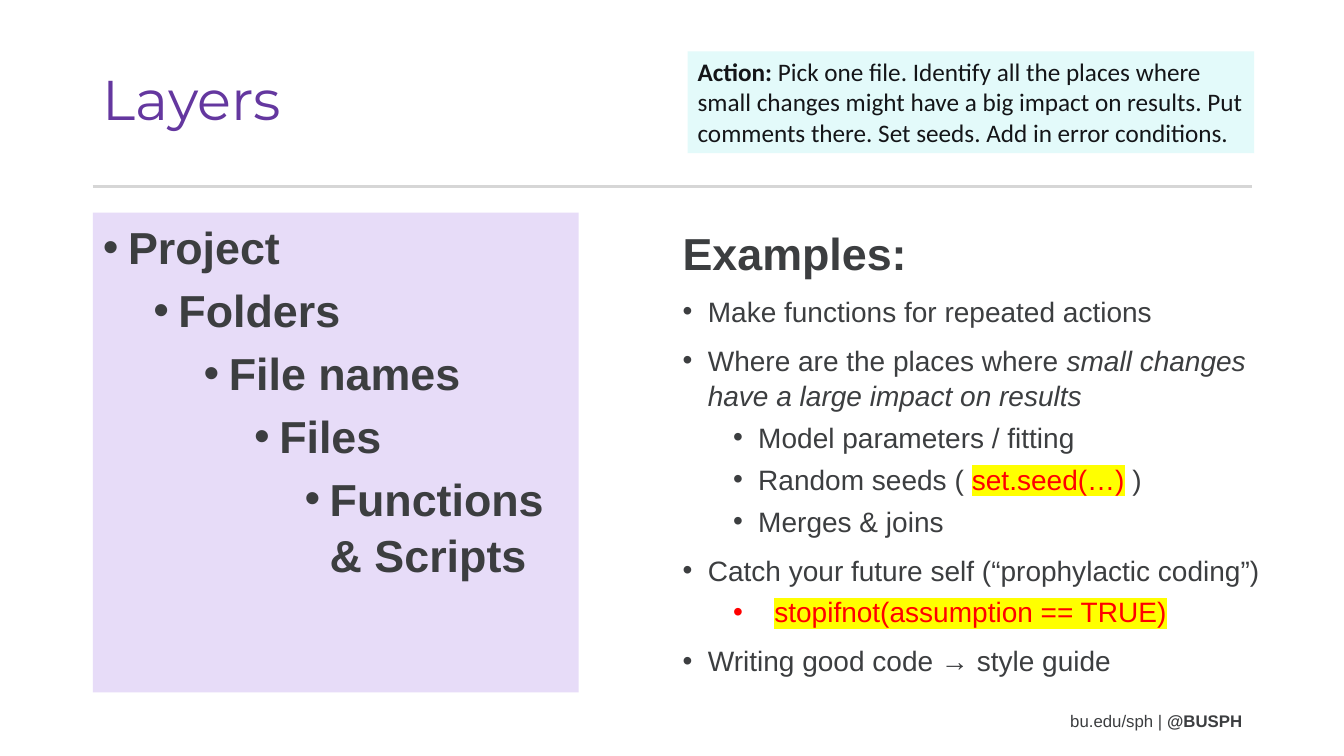
from lxml import etree
from pptx import Presentation
from pptx.dml.color import RGBColor
from pptx.enum.shapes import MSO_CONNECTOR, MSO_SHAPE
from pptx.enum.text import MSO_ANCHOR, MSO_AUTO_SIZE, PP_ALIGN
from pptx.oxml.ns import qn
from pptx.util import Inches, Pt

LEFT, RIGHT = PP_ALIGN.LEFT, PP_ALIGN.RIGHT
TOP, MIDDLE = MSO_ANCHOR.TOP, MSO_ANCHOR.MIDDLE
NO_FIT = MSO_AUTO_SIZE.NONE
RECTANGLE = MSO_SHAPE.RECTANGLE
STRAIGHT = MSO_CONNECTOR.STRAIGHT

COLORS = {
    "text": "3C3E40", "title": "64379F", "rule": "D6D6D6", "lilac": "E7DCF8",
    "aqua": "E3FAFA", "ink": "141518", "code": "FF0000", "marker": "FFFF00",
}
MARGIN, CONTENT_WIDTH = 0.92, 11.5
HANGING, LEVEL_STEP = 0.25, 0.5

HEADING = {"size": 32, "bold": True}
BODY = {"size": 20}
ITALIC = {**BODY, "italic": True}
CODE = {**BODY, "color": "code", "highlight": "marker"}

LAYERS = ["Project", "Folders", "File names", "Files", "Functions & Scripts"]
# Each example: level, runs, distance from bullet to text
EXAMPLES = [
    (0, [("Make functions for repeated actions", BODY)], HANGING),
    (0, [("Where are the places where ", BODY),
         ("small changes have a large impact on results", ITALIC)], HANGING),
    (1, [("Model parameters / fitting", BODY)], HANGING),
    (1, [("Random seeds ( ", BODY), ("set.seed(…)", CODE), (" )", BODY)], HANGING),
    (1, [("Merges & joins", BODY)], HANGING),
    (0, [("Catch your future self (“prophylactic coding”)", BODY)], HANGING),
    (1, [("stopifnot(assumption == TRUE)", CODE)], 0.41),
    (0, [("Writing good code → style guide", BODY)], HANGING),
]


def color(name):
    return RGBColor.from_string(COLORS[name])


def place(shape, box):
    for name, value in zip(("left", "top", "width", "height"), box):
        setattr(shape, name, Inches(value))


def set_frame(shape, anchor):
    frame = shape.text_frame
    for name, value in {"word_wrap": True, "auto_size": NO_FIT,
                        "vertical_anchor": anchor}.items():
        setattr(frame, name, value)
    return frame


def add_run(para, text, size, face="Arial", bold=False, italic=False,
            color_name="text", highlight=None):
    span = para.add_run()
    span.text = text
    for name, value in {"size": Pt(size), "name": face,
                        "bold": bold, "italic": italic}.items():
        setattr(span.font, name, value)
    span.font.color.rgb = color(color_name)
    if highlight:
        marker = etree.Element(qn("a:highlight"))
        etree.SubElement(marker, qn("a:srgbClr"), val=COLORS[highlight])
        span.font.fill  # the marker must directly follow the text fill
        span.font._element.find(qn("a:solidFill")).addnext(marker)


def add_runs(para, runs):
    for text, style in runs:
        style = dict(style)
        add_run(para, text, color_name=style.pop("color", "text"), **style)


def set_bullet(para, level, hanging=HANGING):
    para.level = level
    props = para._p.get_or_add_pPr()
    props.set("marL", str(Inches(level * LEVEL_STEP + hanging)))
    props.set("indent", str(-Inches(hanging)))
    etree.SubElement(props, qn("a:buFont"), typeface="Arial")
    etree.SubElement(props, qn("a:buChar"), char="•")


def set_spacing(para, before, line=1.04):
    para.space_before = Pt(before)
    para.line_spacing = line


def add_footer(slide, box):
    footer = slide.shapes.add_textbox(*map(Inches, box))
    para = set_frame(footer, MIDDLE).paragraphs[0]
    para.alignment = RIGHT
    add_runs(para, [("bu.edu/sph | ", {"size": 12}),
                    ("@BUSPH", {"size": 12, "bold": True})])


def add_rule(slide, left, top, width):
    rule = slide.shapes.add_connector(
        STRAIGHT, *map(Inches, (left, top, left + width, top)))
    rule.line.color.rgb = color("rule")
    rule.line.width = Pt(1.5)
    etree.SubElement(rule._element.spPr, qn("a:effectLst"))


def fill_title(title, box):
    place(title, box)
    para = set_frame(title, MIDDLE).paragraphs[0]
    para.alignment = LEFT
    set_spacing(para, 0, 0.9)
    add_run(para, "Layers", 40, "Montserrat", color_name="title")


def fill_layers(body, box):
    place(body, box)
    body.fill.solid()
    body.fill.fore_color.rgb = color("lilac")
    frame = set_frame(body, TOP)
    for level, layer in enumerate(LAYERS):
        para = frame.add_paragraph() if level else frame.paragraphs[0]
        set_spacing(para, 5 if level else 0)
        set_bullet(para, level)
        add_runs(para, [(layer, HEADING)])


def fill_examples(body, box):
    place(body, box)
    frame = set_frame(body, TOP)
    heading = frame.paragraphs[0]
    set_spacing(heading, 0, 1.5)
    props = heading._p.get_or_add_pPr()
    props.set("marL", "0")
    props.set("indent", "0")
    etree.SubElement(props, qn("a:buNone"))
    add_runs(heading, [("Examples:", HEADING)])
    for level, runs, hanging in EXAMPLES:
        para = frame.add_paragraph()
        set_spacing(para, 5 if level else 10)
        set_bullet(para, level, hanging)
        add_runs(para, runs)


def add_action(slide, box):
    action = slide.shapes.add_shape(RECTANGLE, *map(Inches, box))
    action.shadow.inherit = False
    action.fill.solid()
    action.fill.fore_color.rgb = color("aqua")
    action.line.fill.background()
    para = set_frame(action, TOP).paragraphs[0]
    para.alignment = LEFT
    style = {"size": 18, "face": "Calibri", "color": "ink"}
    add_runs(para, [
        ("Action: ", {**style, "bold": True}),
        ("Pick one file. Identify all the places where small changes might have "
         "a big impact on results. Put comments there. Set seeds. Add in error "
         "conditions.", style),
    ])


def build_layers_slide(deck):
    slide = deck.slides.add_slide(deck.slide_layouts[3])
    title, layers, examples = slide.placeholders
    add_footer(slide, (9.42, 6.95, 3, 0.4))
    add_rule(slide, MARGIN, 1.85, CONTENT_WIDTH)
    fill_title(title, (MARGIN, 0.29, CONTENT_WIDTH, 1.45))
    fill_layers(layers, (MARGIN, 2.11, 4.82, 4.76))
    fill_examples(examples, (6.67, 1.92, 5.93, 4.76))
    add_action(slide, (6.82, 0.51, 5.62, 1.01))


def main():
    deck = Presentation()
    deck.slide_width, deck.slide_height = Inches(13.33), Inches(7.5)
    build_layers_slide(deck)
    deck.save("out.pptx")


if __name__ == "__main__":
    main()
